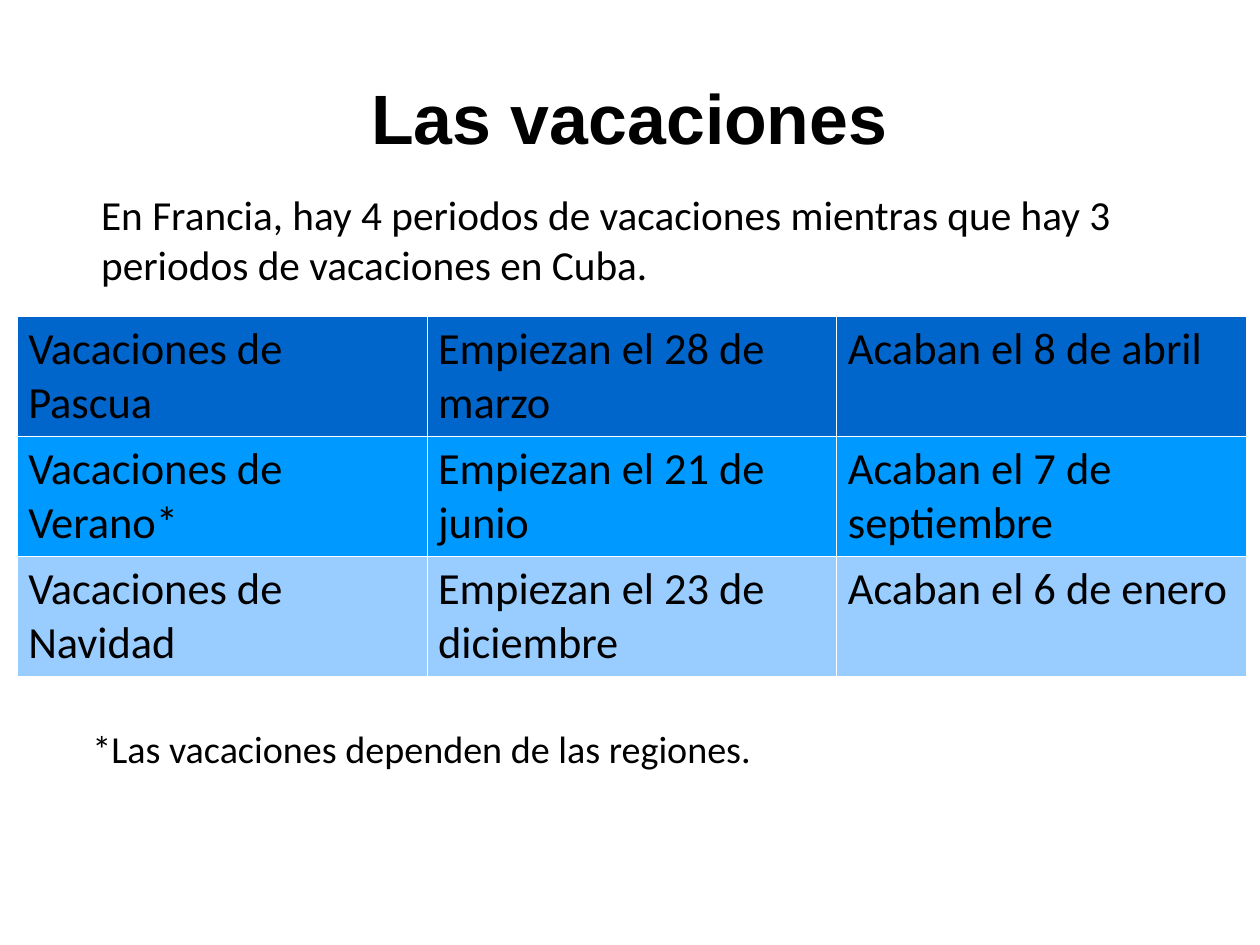
from lxml import etree
from pptx import Presentation
from pptx.dml.color import RGBColor
from pptx.enum.text import MSO_ANCHOR, MSO_AUTO_SIZE, PP_ALIGN
from pptx.oxml.ns import qn
from pptx.util import Pt

MIDDLE, TOP = MSO_ANCHOR.MIDDLE, MSO_ANCHOR.TOP
CENTER, LEFT = PP_ALIGN.CENTER, PP_ALIGN.LEFT
NO_FIT = MSO_AUTO_SIZE.NONE
BLACK, WHITE = "000000", "FFFFFF"

TITLE = "Las vacaciones"
HOLIDAYS = [
    ("0066CC", ("Vacaciones de Pascua", "Empiezan el 28 de marzo", "Acaban el 8 de abril")),
    ("0099FF", ("Vacaciones de Verano*", "Empiezan el 21 de junio", "Acaban el 7 de septiembre")),
    ("99CCFF", ("Vacaciones de Navidad", "Empiezan el 23 de diciembre", "Acaban el 6 de enero")),
]
# text, size, (left, top, width, height)
NOTES = [
    ("En Francia, hay 4 periodos de vacaciones mientras que hay 3 "
     "periodos de vacaciones en Cuba.", 26, (56.6, 115.9, 668.9, 70.6)),
    ("*Las vacaciones dependen de las regiones.", 24, (51.1, 453.4, 532.8, 36)),
]
PAGE_WIDTH, PAGE_HEIGHT = 793.75, 595.25
TITLE_AREA = (39.6, 23.8, 714.2, 99.4)
TABLE_LEFT, TABLE_TOP = 10.6, 199.2
COLUMN_WIDTH, ROW_HEIGHT = 258.2, 49.7
BORDER_WIDTH = 0.06


def color(value):
    return RGBColor.from_string(value)


def write(frame, text, size, font="Calibri", bold=False, align=LEFT):
    frame.word_wrap = True
    para = frame.paragraphs[0]
    para.alignment = align
    span = para.add_run()
    span.text = text
    span.font.name = font
    span.font.size = Pt(size)
    span.font.bold = bold
    span.font.color.rgb = color(BLACK)


def add_borders(cell):
    properties = cell._tc.get_or_add_tcPr()
    for index, side in enumerate(("a:lnL", "a:lnR", "a:lnT", "a:lnB")):
        line = etree.Element(qn(side), w=str(Pt(BORDER_WIDTH)))
        fill = etree.SubElement(line, qn("a:solidFill"))
        etree.SubElement(fill, qn("a:srgbClr"), val=WHITE)
        properties.insert(index, line)


def add_title(page):
    title = page.shapes.title
    title.left, title.top, title.width, title.height = map(Pt, TITLE_AREA)
    frame = title.text_frame
    frame.margin_left = frame.margin_right = frame.margin_top = frame.margin_bottom = 0
    frame.vertical_anchor = MIDDLE
    frame.auto_size = NO_FIT
    write(frame, TITLE, 44, "Arial", True, CENTER)


def add_holiday_table(page):
    rows, columns = len(HOLIDAYS), len(HOLIDAYS[0][1])
    area = (TABLE_LEFT, TABLE_TOP, columns * COLUMN_WIDTH, rows * ROW_HEIGHT)
    table = page.shapes.add_table(rows, columns, *map(Pt, area)).table
    for row, (fill, texts) in enumerate(HOLIDAYS):
        for column, text in enumerate(texts):
            cell = table.cell(row, column)
            cell.fill.solid()
            cell.fill.fore_color.rgb = color(fill)
            cell.vertical_anchor = TOP
            write(cell.text_frame, text, 28)
            add_borders(cell)


def main():
    deck = Presentation()
    deck.slide_width, deck.slide_height = Pt(PAGE_WIDTH), Pt(PAGE_HEIGHT)
    page = deck.slides.add_slide(deck.slide_layouts[5])
    page.background.fill.solid()
    page.background.fill.fore_color.rgb = color(WHITE)
    add_title(page)
    add_holiday_table(page)
    for text, size, area in NOTES:
        box = page.shapes.add_textbox(*map(Pt, area))
        write(box.text_frame, text, size)
    deck.save("out.pptx")


if __name__ == "__main__":
    main()
